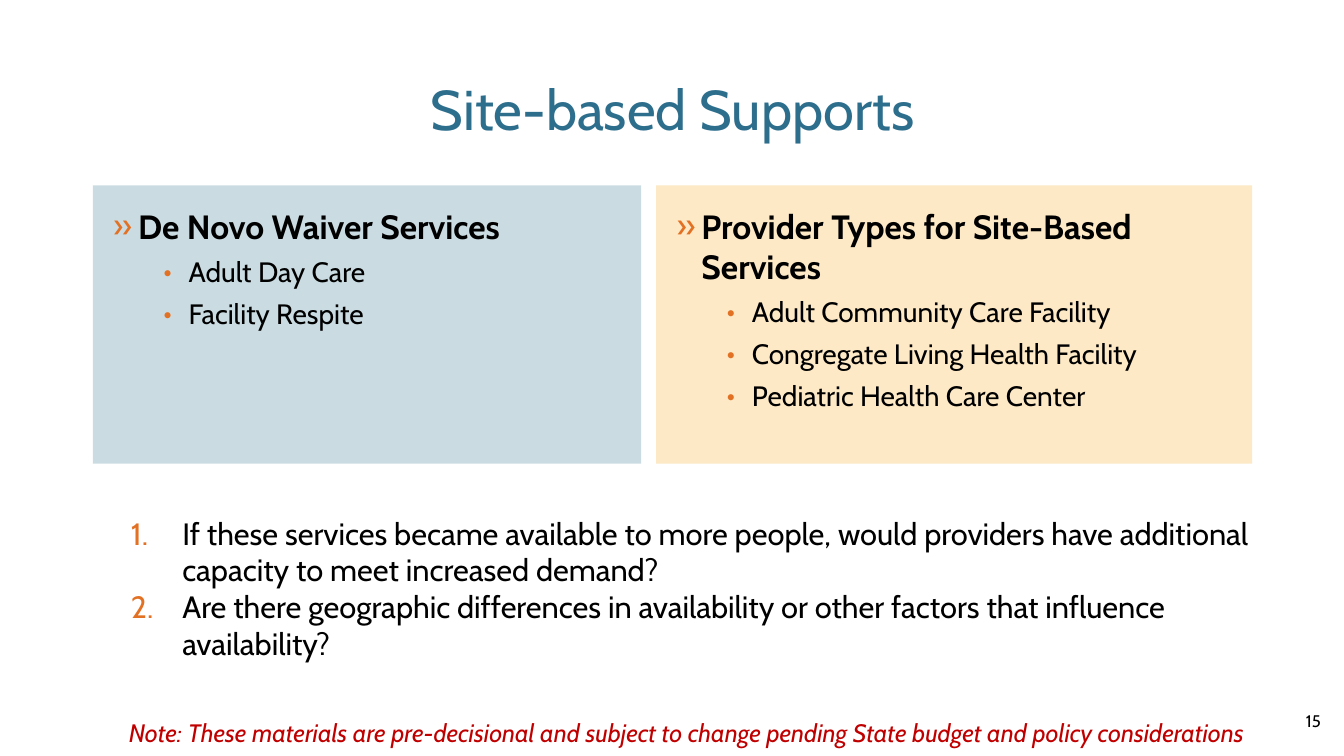
import pptx
import pptx.dml.color
import pptx.enum.shapes
import pptx.enum.text
import pptx.oxml.ns
import pptx.util
from lxml import etree

WIDTH, HEIGHT = 13.33, 7.5
MARGIN = 0.92
CONTENT_W = WIDTH - 2 * MARGIN + 0.01
GAP = 0.15
PANEL_TOP, PANEL_H = 1.84, 2.76
LEFT_SHARE = 0.48
FONT = "Cabin"
BLACK, BLUE, ORANGE, RED = "000000", "2D6E8D", "E37124", "C00000"
ALIGN = pptx.enum.text.PP_ALIGN
ANCHOR = pptx.enum.text.MSO_ANCHOR


def color(value):
    return pptx.dml.color.RGBColor.from_string(value)


def box(left, top, width, height):
    return [pptx.util.Inches(v) for v in (left, top, width, height)]


def set_frame(tf, anchor, insets=(0.1, 0.05, 0.1, 0.05)):
    tf.word_wrap = True
    tf.auto_size = pptx.enum.text.MSO_AUTO_SIZE.NONE
    tf.vertical_anchor = anchor
    tf.margin_left, tf.margin_top, tf.margin_right, tf.margin_bottom = box(*insets)


def add_run(p, text, size, fill=BLACK, bold=False, italic=False):
    r = p.add_run()
    r.text = text
    r.font.name = FONT
    r.font.size = pptx.util.Pt(size)
    r.font.bold, r.font.italic = bold, italic
    r.font.color.rgb = color(fill)


def set_bullet(p, indent, hanging, char=None):
    """Use the given bullet character, or automatic numbers without one."""
    qn = pptx.oxml.ns.qn
    pPr = p._p.get_or_add_pPr()
    pPr.set("marL", str(pptx.util.Inches(indent)))
    pPr.set("indent", str(-pptx.util.Inches(hanging)))
    clr = etree.SubElement(pPr, qn("a:buClr"))
    etree.SubElement(clr, qn("a:srgbClr"), val=ORANGE)
    etree.SubElement(pPr, qn("a:buFont"), typeface=FONT)
    if char:
        etree.SubElement(pPr, qn("a:buChar"), char=char)
    else:
        etree.SubElement(pPr, qn("a:buAutoNum"), type="arabicPeriod")


def paragraphs(tf, count):
    return [tf.paragraphs[0]] + [tf.add_paragraph() for _ in range(count - 1)]


def add_title(s, text):
    sp = s.shapes.title
    sp.left, sp.top, sp.width, sp.height = box(MARGIN, 0.4, CONTENT_W, 1.35)
    set_frame(sp.text_frame, ANCHOR.MIDDLE)
    p = sp.text_frame.paragraphs[0]
    p.alignment = ALIGN.CENTER
    add_run(p, text, 40, BLUE)


def add_panel(s, left, width, fill, heading, items):
    sp = s.shapes.add_shape(pptx.enum.shapes.MSO_SHAPE.RECTANGLE,
                            *box(left, PANEL_TOP, width, PANEL_H))
    sp.shadow.inherit = False
    sp.fill.solid()
    sp.fill.fore_color.rgb = color(fill)
    sp.line.fill.background()
    tf = sp.text_frame
    set_frame(tf, ANCHOR.TOP, (0.2, 0.2, 0.2, 0.05))
    for i, (p, text) in enumerate(zip(paragraphs(tf, 1 + len(items)), [heading] + items)):
        is_heading = i == 0
        p.level = 0 if is_heading else 1
        p.alignment = ALIGN.LEFT
        p.space_after = pptx.util.Pt(6)
        set_bullet(p, 0.25 if is_heading else 0.75, 0.25, "»" if is_heading else "•")
        add_run(p, text, 24 if is_heading else 20, bold=is_heading)


def add_questions(s, questions):
    tf = s.shapes.add_textbox(*box(0.97, 4.72, 11.56, 2.23)).text_frame
    set_frame(tf, ANCHOR.MIDDLE)
    for p, text in zip(paragraphs(tf, len(questions)), questions):
        set_bullet(p, 0.74, 0.51)
        add_run(p, text, 22)


def add_line(s, place, text, size, align, anchor, **style):
    tf = s.shapes.add_textbox(*box(*place)).text_frame
    set_frame(tf, anchor)
    p = tf.paragraphs[0]
    p.alignment = align
    add_run(p, text, size, **style)


def main():
    prs = pptx.Presentation()
    prs.slide_width, prs.slide_height = pptx.util.Inches(WIDTH), pptx.util.Inches(HEIGHT)
    s = prs.slides.add_slide(prs.slide_layouts[5])

    add_title(s, "Site-based Supports")

    # Services and providers, side by side
    left_w = (CONTENT_W - GAP) * LEFT_SHARE - 0.01
    right_w = CONTENT_W - GAP - left_w
    add_panel(s, MARGIN, left_w, "CADCE2", "De Novo Waiver Services",
              ["Adult Day Care", "Facility Respite"])
    add_panel(s, MARGIN + left_w + GAP, right_w, "FDE9C6",
              "Provider Types for Site-Based Services",
              ["Adult Community Care Facility", "Congregate Living Health Facility",
               "Pediatric Health Care Center"])

    # Discussion questions
    add_questions(s, [
        "If these services became available to more people, would providers have "
        "additional capacity to meet increased demand?",
        "Are there geographic differences in availability or other factors that "
        "influence availability?"])

    # Footer note and page number
    add_line(s, (0.28, 7.07, 13.06, 0.28),
             "Note: These materials are pre-decisional and subject to change pending "
             "State budget and policy considerations",
             18, ALIGN.CENTER, ANCHOR.TOP, fill=RED, italic=True)
    add_line(s, (10.2, 6.95, 3, 0.4), "15", 12, ALIGN.RIGHT, ANCHOR.MIDDLE)

    prs.save("out.pptx")


if __name__ == "__main__":
    main()
